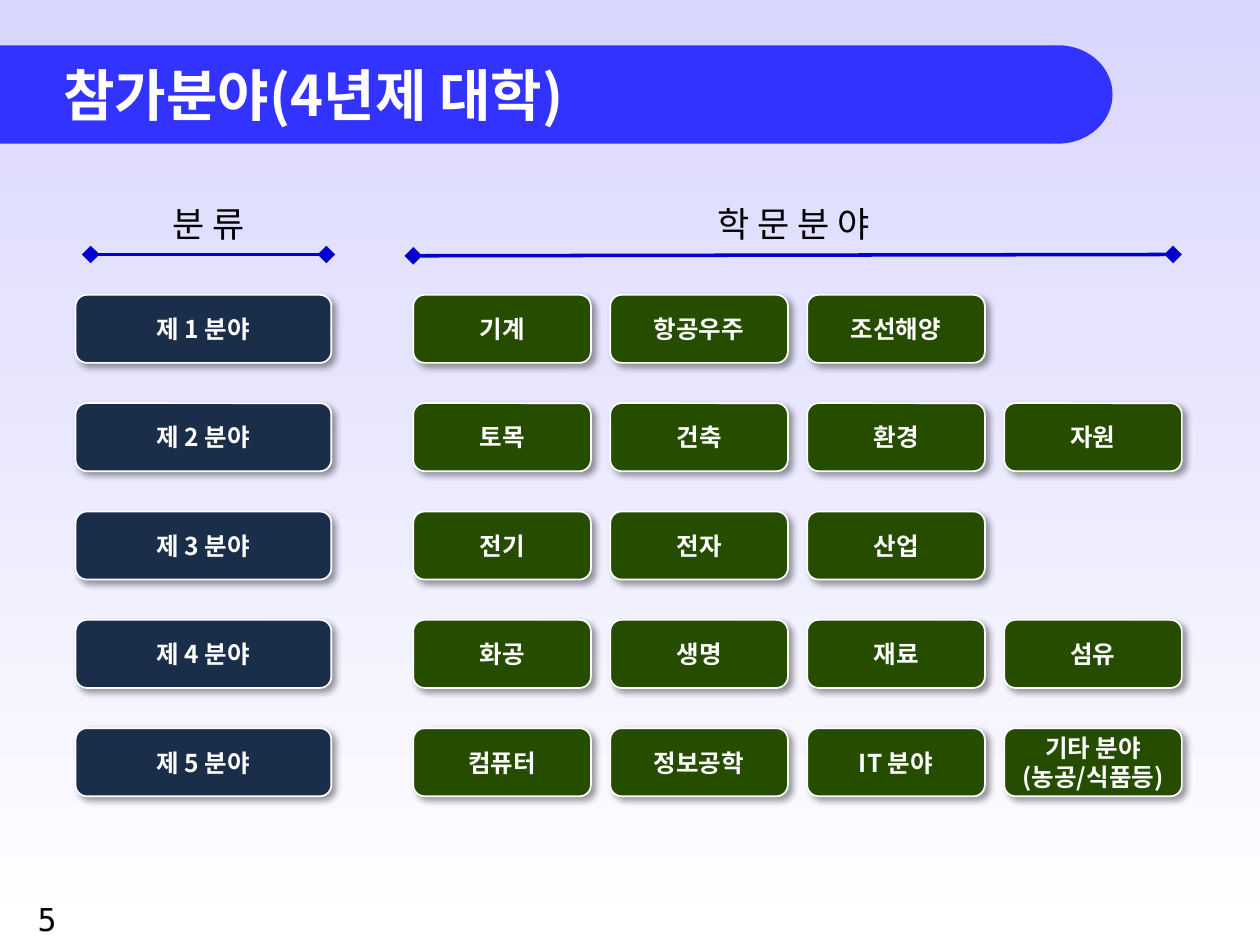
from lxml import etree
from pptx import Presentation
from pptx.dml.color import RGBColor
from pptx.enum.shapes import MSO_CONNECTOR, MSO_SHAPE
from pptx.enum.text import MSO_ANCHOR, PP_ALIGN
from pptx.oxml.ns import qn
from pptx.util import Inches, Pt

# Content
TITLE = "참가분야(4년제 대학)"
PAGE_NUMBER = "5"
FIELDS = [
    ("제 1 분야", ["기계", "항공우주", "조선해양"]),
    ("제 2 분야", ["토목", "건축", "환경", "자원"]),
    ("제 3 분야", ["전기", "전자", "산업"]),
    ("제 4 분야", ["화공", "생명", "재료", "섬유"]),
    ("제 5 분야", ["컴퓨터", "정보공학", "IT 분야", "기타 분야\n(농공/식품등)"]),
]
# Heading, its left and width, then the start and end of the line below it
HEADINGS = [
    ("분 류", 0.64, 2.03, (0.72, 2.02), (2.59, 2.02)),
    ("학 문 분 야", 3.37, 5.86, (3.28, 2.03), (9.31, 2.02)),
]

# Style
KOREAN_FONT = "Noto Sans CJK KR"
NUMBER_FONT = "DejaVu Sans Mono"
WHITE = RGBColor(0xFF, 0xFF, 0xFF)
BLACK = RGBColor(0x00, 0x00, 0x00)
LAVENDER = RGBColor(0xD9, 0xD6, 0xFE)
BLUE = RGBColor(0x33, 0x33, 0xFF)
LINE_BLUE = RGBColor(0x00, 0x00, 0xCC)
NAVY = RGBColor(0x1B, 0x2E, 0x49)
GREEN = RGBColor(0x26, 0x4C, 0x00)
ROUNDED = MSO_SHAPE.ROUNDED_RECTANGLE
HEADING_SHAPE = MSO_SHAPE.FLOWCHART_ALTERNATE_PROCESS
OVAL = MSO_SHAPE.OVAL
STRAIGHT = MSO_CONNECTOR.STRAIGHT
CENTER, LEFT = PP_ALIGN.CENTER, PP_ALIGN.LEFT
MIDDLE = MSO_ANCHOR.MIDDLE

# Grid
GRID_TOP, ROW_PITCH, BOX_HEIGHT = 2.34, 0.86, 0.54
FIELD_LEFT, FIELD_WIDTH = 0.6, 2.03
SUBJECT_LEFT, SUBJECT_RIGHT, SUBJECT_WIDTH = 3.28, 9.38, 1.41
COLUMNS = max(len(subjects) for _, subjects in FIELDS)
COLUMN_PITCH = (SUBJECT_RIGHT - SUBJECT_LEFT - SUBJECT_WIDTH) / (COLUMNS - 1)


def write(shape, text, size, color, bold=False, align=CENTER, font=KOREAN_FONT):
    shape.text_frame.text = text
    for paragraph in shape.text_frame.paragraphs:
        paragraph.alignment = align
        for run in paragraph.runs:
            run.font.name = font
            run.font.size = Pt(size)
            run.font.bold = bold
            run.font.color.rgb = color
            east_asian = etree.Element(qn("a:ea"), typeface=font)
            run.font._element.find(qn("a:latin")).addnext(east_asian)


def add_shadow(shape):
    shape.shadow.inherit = False
    effects = shape._element.spPr.find(qn("a:effectLst"))
    shadow = etree.SubElement(
        effects, qn("a:outerShdw"), blurRad=str(Pt(4)), dist=str(Pt(3)),
        dir=str(45 * 60000), algn="tl", rotWithShape="0")
    color = etree.SubElement(shadow, qn("a:srgbClr"), val=str(BLACK))
    etree.SubElement(color, qn("a:alpha"), val="40000")


def add_box(slide, left, top, width, text, color):
    box = slide.shapes.add_shape(
        ROUNDED, Inches(left), Inches(top), Inches(width), Inches(BOX_HEIGHT))
    box.fill.solid()
    box.fill.fore_color.rgb = color
    box.line.color.rgb = WHITE
    box.line.width = Pt(1)
    add_shadow(box)
    frame = box.text_frame
    frame.margin_left = frame.margin_right = 0
    frame.margin_top = frame.margin_bottom = 0
    frame.vertical_anchor = MIDDLE
    write(box, text, 14, WHITE, bold=True)


def add_heading(slide, text, left, width, start, end):
    heading = slide.shapes.add_shape(
        HEADING_SHAPE, Inches(left), Inches(1.55), Inches(width), Inches(0.45))
    heading.fill.background()
    heading.line.fill.background()
    heading.shadow.inherit = False
    heading.text_frame.word_wrap = False
    heading.text_frame.vertical_anchor = MIDDLE
    write(heading, text, 20, BLACK)

    rule = slide.shapes.add_connector(
        STRAIGHT, *(Inches(value) for value in start + end))
    rule.line.color.rgb = LINE_BLUE
    rule.line.width = Pt(2)
    for tag in ("a:headEnd", "a:tailEnd"):
        etree.SubElement(rule.line._get_or_add_ln(), qn(tag),
                         type="diamond", w="lg", len="lg")
    etree.SubElement(rule._element.spPr, qn("a:effectLst"))


def add_title(slide):
    title = slide.shapes.title
    title.left, title.top = Inches(0), Inches(0.36)
    title.width, title.height = Inches(8.36), Inches(0.78)
    title.fill.solid()
    title.fill.fore_color.rgb = BLUE
    title.text_frame.vertical_anchor = MIDDLE
    write(title, TITLE, 32, WHITE, bold=True, align=LEFT)
    title.text_frame.paragraphs[0]._p.get_or_add_pPr().set("marL", str(Inches(0.4)))

    # Round end of the title band
    cap = slide.shapes.add_shape(
        OVAL, Inches(7.97), Inches(0.36), Inches(0.86), Inches(0.78))
    cap.fill.solid()
    cap.fill.fore_color.rgb = BLUE
    cap.line.fill.background()
    cap.shadow.inherit = False


def main():
    presentation = Presentation()
    presentation.slide_width, presentation.slide_height = Inches(10), Inches(7.5)
    slide = presentation.slides.add_slide(presentation.slide_layouts[5])

    # Background, lavender at the top
    background = slide.background.fill
    background.gradient()
    background.gradient_angle = 270
    for stop, color in zip(background.gradient_stops, (LAVENDER, WHITE)):
        stop.color.rgb = color

    add_title(slide)
    for heading in HEADINGS:
        add_heading(slide, *heading)

    # One row for each field, with its subjects
    for row, (field, subjects) in enumerate(FIELDS):
        top = GRID_TOP + row * ROW_PITCH
        add_box(slide, FIELD_LEFT, top, FIELD_WIDTH, field, NAVY)
        for column, subject in enumerate(subjects):
            left = SUBJECT_LEFT + column * COLUMN_PITCH
            add_box(slide, left, top, SUBJECT_WIDTH, subject, GREEN)

    # Page number
    number = slide.shapes.add_textbox(
        Inches(0.2), Inches(7.09), Inches(0.56), Inches(0.4))
    number.text_frame.word_wrap = True
    write(number, PAGE_NUMBER, 18, BLACK, align=LEFT, font=NUMBER_FONT)

    presentation.save("out.pptx")


if __name__ == "__main__":
    main()
